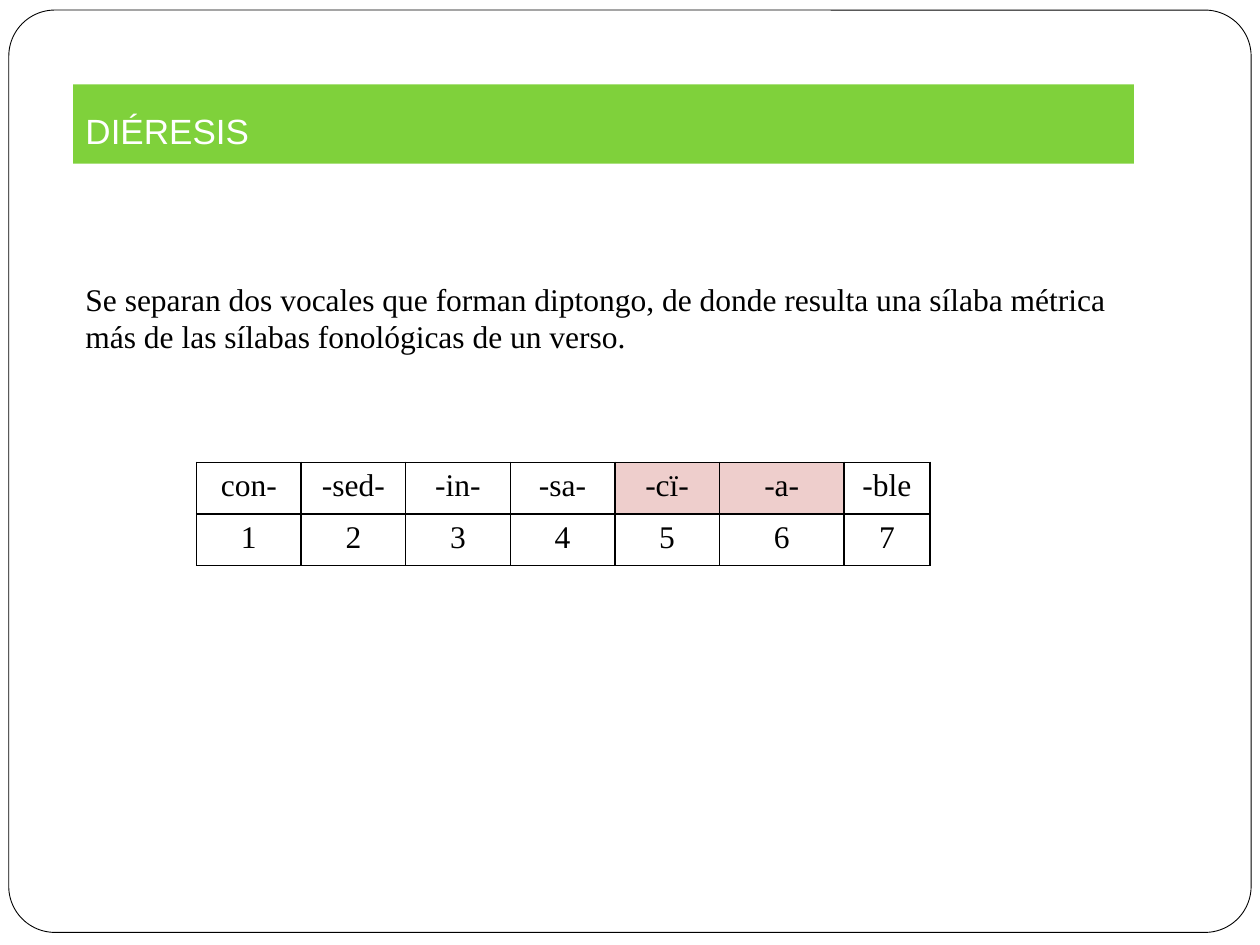
from lxml import etree
from pptx import Presentation
from pptx import util as u
from pptx.dml.color import RGBColor
from pptx.enum import shapes, text
from pptx.oxml import ns

# Content
HEADING = "DIÉRESIS"
DEFINITION = ("Se separan dos vocales que forman diptongo, de donde resulta una "
              "sílaba métrica más de las sílabas fonológicas de un verso.")
SYLLABLES = ["con-", "-sed-", "-in-", "-sa-", "-cï-", "-a-", "-ble"]
SPLIT_VOWELS = {"-cï-", "-a-"}

THEME = {
    "paper": RGBColor.from_string("FFFFFF"),
    "ink": RGBColor.from_string("000000"),
    "banner": RGBColor.from_string("7FD13B"),
    "highlight": RGBColor.from_string("EECECC"),
    "heading": {"name": "Arial", "size": u.Pt(20)},
    "body": {"name": "Times New Roman", "size": u.Pt(18)},
}

# Layout in inches
SIZE = (10, 7.5)
FRAME = (0.07, 0.08, 9.86, 7.32)
LEFT = 0.58
BANNER = (LEFT, 0.67, 8.42, 0.63)
DEFINITION_BOX = (LEFT, 2.17, 8.71, 0.91)
TABLE_AT = (1.56, 3.67)
COLUMNS = [0.83] * 5 + [0.99, 0.68]
ROW = 0.41


def inches(values):
    return [u.Inches(value) for value in values]


def apply(target, values):
    for key, value in values.items():
        setattr(target, key, value)


def write(frame, words, style, color, align=text.PP_ALIGN.LEFT):
    paragraph = frame.paragraphs[0]
    paragraph.alignment = align
    run = paragraph.add_run()
    run.text = words
    apply(run.font, THEME[style])
    run.font.color.rgb = THEME[color]


def panel(slide, kind, place, fill):
    part = slide.shapes.add_shape(kind, *inches(place))
    part.shadow.inherit = False
    part.fill.solid()
    part.fill.fore_color.rgb = THEME[fill]
    part.line.fill.background()
    return part


def border(cell):
    properties = cell._tc.get_or_add_tcPr()
    for position, side in enumerate(("lnL", "lnR", "lnT", "lnB")):
        edge = etree.Element(ns.qn(f"a:{side}"), w=str(u.Pt(1)))
        fill = etree.SubElement(edge, ns.qn("a:solidFill"))
        etree.SubElement(fill, ns.qn("a:srgbClr"), val=str(THEME["ink"]))
        properties.insert(position, edge)


def syllable_table(slide):
    rows = [SYLLABLES, [str(n) for n in range(1, len(SYLLABLES) + 1)]]
    extent = (sum(COLUMNS), ROW * len(rows))
    table = slide.shapes.add_table(
        len(rows), len(COLUMNS), *inches(TABLE_AT + extent)).table
    apply(table, {"first_row": False, "horz_banding": False})
    for column, width in zip(table.columns, inches(COLUMNS)):
        column.width = width
    for r, row in enumerate(rows):
        table.rows[r].height = u.Inches(ROW)
        for c, words in enumerate(row):
            cell = table.cell(r, c)
            cell.fill.solid()
            shade = "highlight" if words in SPLIT_VOWELS else "paper"
            cell.fill.fore_color.rgb = THEME[shade]
            write(cell.text_frame, words, "body", "ink", text.PP_ALIGN.CENTER)
            border(cell)


def main():
    deck = Presentation()
    deck.slide_width, deck.slide_height = inches(SIZE)
    slide = deck.slides.add_slide(deck.slide_layouts[6])

    # Page frame
    frame = panel(slide, shapes.MSO_SHAPE.ROUNDED_RECTANGLE, FRAME, "paper")
    frame.adjustments[0] = 0.05
    frame.line.color.rgb = THEME["ink"]
    frame.line.width = u.Pt(0.5)

    # Definition
    definition = slide.shapes.add_textbox(*inches(DEFINITION_BOX)).text_frame
    definition.word_wrap = True
    write(definition, DEFINITION, "body", "ink")

    # Metrical syllables
    syllable_table(slide)

    # Heading banner
    banner = panel(slide, shapes.MSO_SHAPE.RECTANGLE, BANNER, "banner").text_frame
    apply(banner, {"vertical_anchor": text.MSO_ANCHOR.BOTTOM,
                   "margin_bottom": u.Inches(0.1)})
    write(banner, HEADING, "heading", "paper")

    deck.save("out.pptx")


if __name__ == "__main__":
    main()
